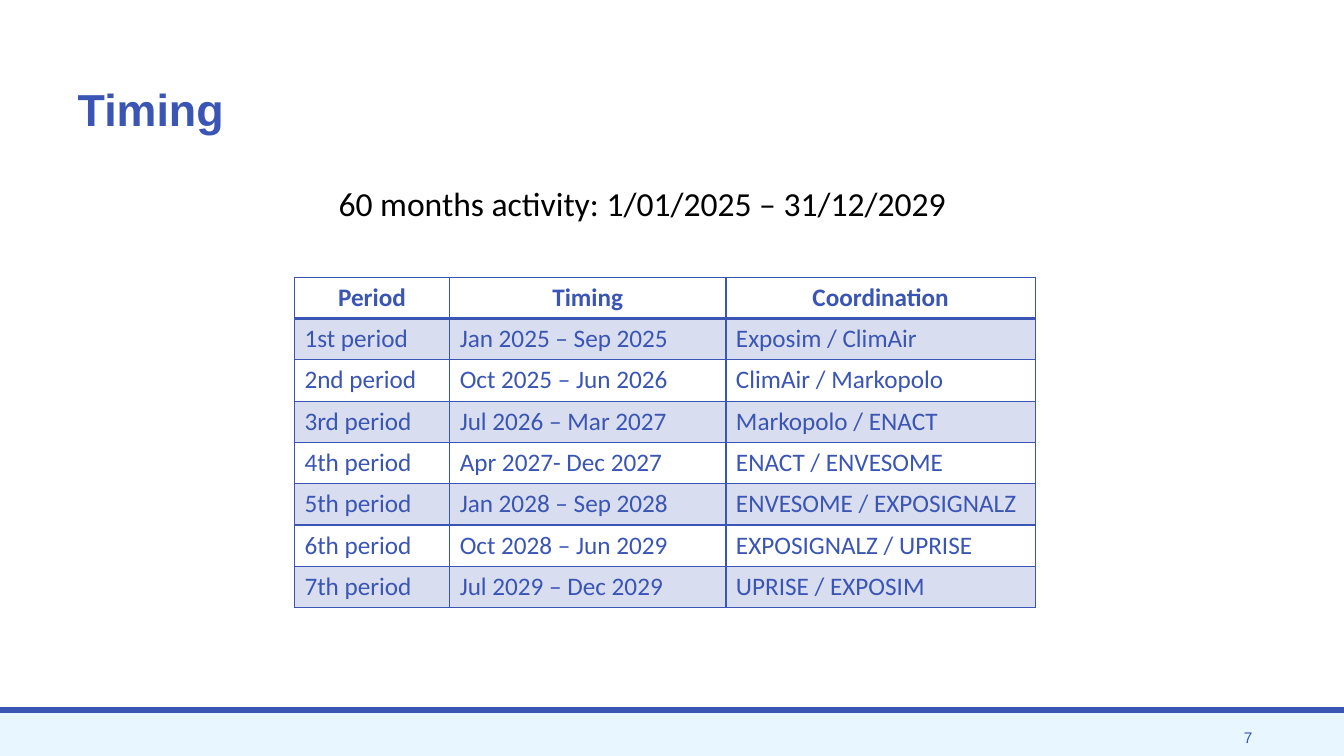
import dataclasses

import lxml.etree
import pptx
import pptx.dml.color
import pptx.enum.shapes
import pptx.enum.text
import pptx.oxml.ns
import pptx.util

ALIGN = pptx.enum.text.PP_ALIGN
MIDDLE = pptx.enum.text.MSO_ANCHOR.MIDDLE


@dataclasses.dataclass(frozen=True)
class Theme:
    blue: str = "3A55B4"
    band: str = "D8DDF0"
    foot: str = "E8F7FF"
    black: str = "000000"
    head_font: str = "Arial"
    body_font: str = "Calibri"
    title: int = 32
    lead: int = 24
    cell: int = 18
    number: int = 11


THEME = Theme()
WIDE, HIGH = 13.33, 7.5
COLS = (1.54, 2.74, 3.07)
ROW = 0.41
ROWS = (
    ("Period", "Timing", "Coordination"),
    ("1st period", "Jan 2025 – Sep 2025", "Exposim / ClimAir"),
    ("2nd period", "Oct 2025 – Jun 2026", "ClimAir / Markopolo"),
    ("3rd period", "Jul 2026 – Mar 2027", "Markopolo / ENACT"),
    ("4th period", "Apr 2027- Dec 2027", "ENACT / ENVESOME"),
    ("5th period", "Jan 2028 – Sep 2028", "ENVESOME / EXPOSIGNALZ"),
    ("6th period", "Oct 2028 – Jun 2029", "EXPOSIGNALZ / UPRISE"),
    ("7th period", "Jul 2029 – Dec 2029", "UPRISE / EXPOSIM"),
)


def inches(*sizes):
    return [pptx.util.Inches(size) for size in sizes]


def color(code):
    return pptx.dml.color.RGBColor.from_string(code)


def write(frame, text, font, size, ink, bold=False, align=ALIGN.LEFT):
    """Fill a text frame with one styled paragraph."""
    frame.text = text
    para = frame.paragraphs[0]
    para.alignment = align
    para.font.name = font
    para.font.size = pptx.util.Pt(size)
    para.font.bold = bold
    para.font.color.rgb = color(ink)
    return para


def add_text(slide, box, text, font, size, ink, align=ALIGN.LEFT):
    frame = slide.shapes.add_textbox(*inches(*box)).text_frame
    frame.word_wrap = True
    frame.vertical_anchor = MIDDLE
    write(frame, text, font, size, ink, align=align)


def add_bar(slide, box, fill, line=None):
    bar = slide.shapes.add_shape(
        pptx.enum.shapes.MSO_SHAPE.RECTANGLE, *inches(*box))
    bar.shadow.inherit = False
    bar.fill.solid()
    bar.fill.fore_color.rgb = color(fill)
    if line:
        bar.line.color.rgb = color(line)
        bar.line.width = pptx.util.Pt(1)
    else:
        bar.line.fill.background()


def add_footer(slide, box, number):
    left, top, width, height = box
    rule = 0.05
    add_bar(slide, (left, top + rule, width, height - rule), THEME.foot)
    add_bar(slide, (left, top, width, rule), THEME.blue, THEME.blue)
    # Slide number
    add_text(slide, (left + 9.68, top + 0.15, 2.84, 0.3), number,
             THEME.head_font, THEME.number, THEME.blue, ALIGN.RIGHT)


def add_title(slide, box, text):
    title = slide.shapes.title
    title.left, title.top, title.width, title.height = inches(*box)
    frame = title.text_frame
    frame.vertical_anchor = MIDDLE
    frame.auto_size = pptx.enum.text.MSO_AUTO_SIZE.NONE
    para = write(frame, text, THEME.head_font, THEME.title, THEME.blue, True)
    para.line_spacing = 0.9


def set_edges(cell, widths):
    """Draw left, right, top and bottom borders ahead of the cell fill."""
    props = cell._tc.get_or_add_tcPr()
    qn = pptx.oxml.ns.qn
    for place, (side, width) in enumerate(widths.items()):
        edge = lxml.etree.Element(
            qn(f"a:ln{side}"), w=str(pptx.util.Pt(width)))
        fill = lxml.etree.SubElement(edge, qn("a:solidFill"))
        lxml.etree.SubElement(fill, qn("a:srgbClr"), val=THEME.blue)
        props.insert(place, edge)


def add_table(slide, left, top):
    table = slide.shapes.add_table(
        len(ROWS), len(COLS),
        *inches(left, top, sum(COLS), ROW * len(ROWS))).table
    table.horz_banding = False
    for column, width in zip(table.columns, COLS):
        column.width = pptx.util.Inches(width)
    for r, texts in enumerate(ROWS):
        head = r == 0
        table.rows[r].height = pptx.util.Inches(ROW)
        for c, text in enumerate(texts):
            cell = table.cell(r, c)
            write(cell.text_frame, text, THEME.body_font, THEME.cell,
                  THEME.blue, head, ALIGN.CENTER if head else ALIGN.LEFT)
            # Odd rows are banded
            if r % 2:
                cell.fill.solid()
                cell.fill.fore_color.rgb = color(THEME.band)
            else:
                cell.fill.background()
            set_edges(cell, {"L": 1, "R": 1, "T": 2 if r == 1 else 1,
                             "B": 2 if head else 1})


def add_timing(deck):
    slide = deck.slides.add_slide(deck.slide_layouts[5])
    add_footer(slide, (0, 7.02, WIDE, HIGH - 7.02), "7")
    add_title(slide, (0.67, 0.85, 11.84, 0.53), "Timing")
    # Lead line
    add_text(slide, (3.26, 1.76, 6.67, 0.5),
             "60 months activity: 1/01/2025 – 31/12/2029",
             THEME.body_font, THEME.lead, THEME.black)
    add_table(slide, 2.92, 2.75)


def main():
    deck = pptx.Presentation()
    deck.slide_width, deck.slide_height = inches(WIDE, HIGH)
    add_timing(deck)
    deck.save("out.pptx")


if __name__ == "__main__":
    main()
